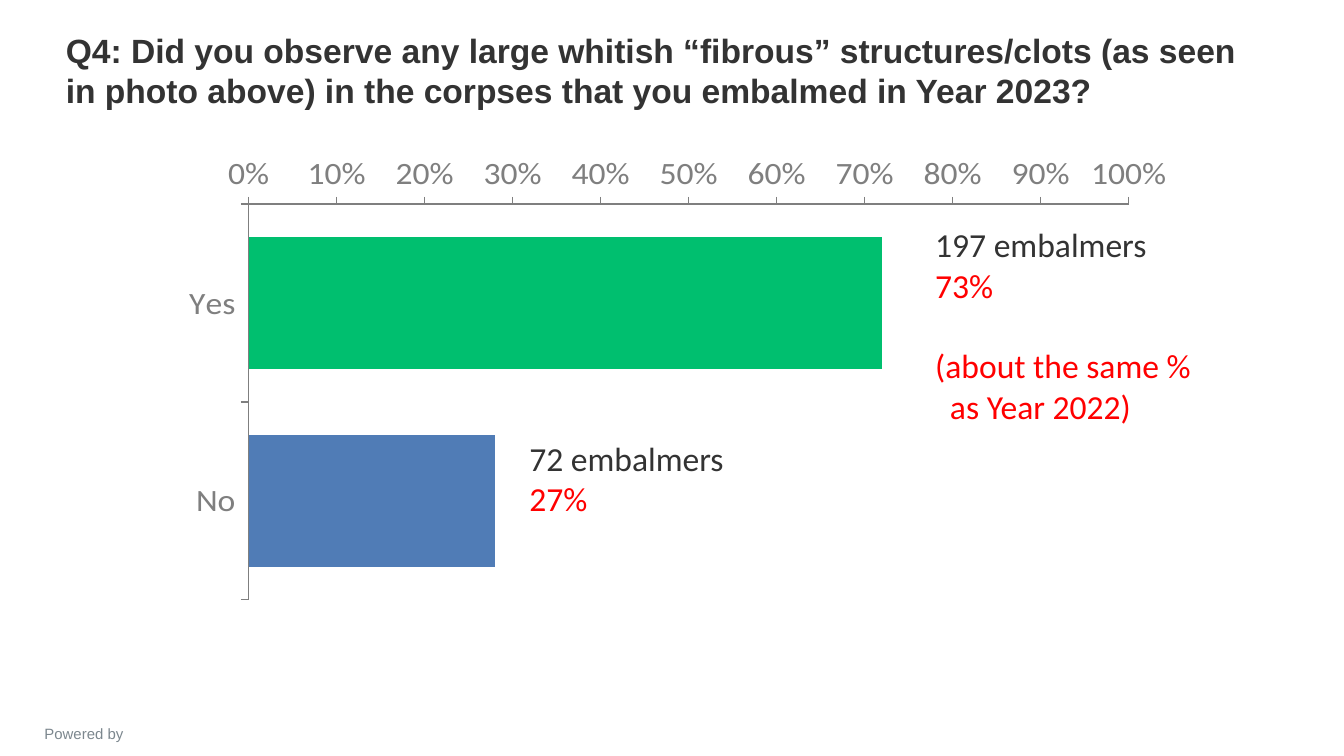
from dataclasses import dataclass
from typing import NamedTuple

from lxml import etree
from pptx import Presentation
from pptx.chart.data import CategoryChartData
from pptx.dml.color import RGBColor
from pptx.enum.chart import XL_CHART_TYPE, XL_TICK_LABEL_POSITION, XL_TICK_MARK
from pptx.enum.text import MSO_ANCHOR, MSO_AUTO_SIZE, PP_ALIGN
from pptx.oxml import parse_xml
from pptx.oxml.ns import nsdecls, qn
from pptx.util import Inches, Pt

LEFT, CENTER = PP_ALIGN.LEFT, PP_ALIGN.CENTER
TOP, BOTTOM = MSO_ANCHOR.TOP, MSO_ANCHOR.BOTTOM
NO_FIT, GROW = MSO_AUTO_SIZE.NONE, MSO_AUTO_SIZE.SHAPE_TO_FIT_TEXT
OUTSIDE, NO_TICK = XL_TICK_MARK.OUTSIDE, XL_TICK_MARK.NONE
LABELS_LOW = XL_TICK_LABEL_POSITION.LOW
BAR_CLUSTERED = XL_CHART_TYPE.BAR_CLUSTERED


@dataclass(frozen=True)
class Theme:
    ink: str = "333333"
    accent: str = "FF0000"
    axis: str = "7F7F7F"
    credit: str = "7C878E"
    heading_font: str = "Arial"
    body_font: str = "Calibri"
    body_size: float = 18
    small_size: float = 8


THEME = Theme()
SLIDE_WIDTH = 10
SLIDE_HEIGHT = SLIDE_WIDTH * 9 / 16


class Area(NamedTuple):
    """A rectangle in inches."""
    left: float
    top: float
    width: float
    height: float


class Line(NamedTuple):
    """One paragraph of text; gap in points, indent in inches."""
    text: str
    color: str = THEME.ink
    gap: float = 0
    indent: float = 0


class Answer(NamedTuple):
    label: str
    share: float
    color: str
    note_area: Area
    note: tuple[Line, ...]


ANSWERS = (
    Answer("Yes", 0.72, "00BF6F", Area(6.86, 1.62, 2.32, 1.62), (
        Line("197 embalmers"),
        Line("73%", THEME.accent),
        Line("(about the same %", THEME.accent, gap=21.5),
        Line("as Year 2022)", THEME.accent, indent=0.11),
    )),
    Answer("No", 0.28, "507CB6", Area(3.84, 3.21, 1.8, 0.71), (
        Line("72 embalmers"),
        Line("27%", THEME.accent),
    )),
)


def rgb(color: str) -> RGBColor:
    return RGBColor.from_string(color)


def place(area: Area) -> list[int]:
    return [Inches(length) for length in area]


def write(box, lines, *, font=THEME.body_font, size=THEME.body_size, bold=False,
          align=LEFT, anchor=TOP, wrap=True, fit=NO_FIT) -> None:
    """Fill a text box or placeholder with formatted paragraphs."""
    frame = box.text_frame
    frame.word_wrap, frame.auto_size, frame.vertical_anchor = wrap, fit, anchor
    for index, line in enumerate(lines):
        para = frame.paragraphs[0] if index == 0 else frame.add_paragraph()
        para.alignment = align
        para.space_before = Pt(line.gap)
        if line.indent:
            para._p.get_or_add_pPr().set("marL", str(Inches(line.indent)))
        span = para.add_run()
        span.text = line.text
        span.font.name, span.font.size, span.font.bold = font, Pt(size), bold
        span.font.color.rgb = rgb(line.color)


def add_note(page, area: Area, lines, **format_options) -> None:
    write(page.shapes.add_textbox(*place(area)), lines, **format_options)


def style_axis(axis) -> None:
    axis.has_major_gridlines = False
    axis.major_tick_mark, axis.minor_tick_mark = OUTSIDE, NO_TICK
    axis.format.line.color.rgb = rgb(THEME.axis)
    axis.format.line.width = Pt(0.75)
    axis.tick_labels.font.size = Pt(THEME.body_size)
    axis.tick_labels.font.color.rgb = rgb(THEME.axis)


def set_plot_area(chart, shares: Area) -> None:
    """Fix the inner plot area, given as shares of the chart frame."""
    plot_area = chart._chartSpace.chart.plotArea
    for old in plot_area.findall(qn("c:layout")):
        plot_area.remove(old)
    layout = parse_xml(f"<c:layout {nsdecls('c')}><c:manualLayout/></c:layout>")
    settings = {"layoutTarget": "inner", "xMode": "edge", "yMode": "edge",
                **dict(zip("xywh", shares))}
    for name, value in settings.items():
        etree.SubElement(layout[0], qn(f"c:{name}")).set("val", str(value))
    plot_area.insert(0, layout)


def add_answer_chart(page, area: Area) -> None:
    data = CategoryChartData(number_format="0%")
    data.categories = [answer.label for answer in ANSWERS]
    data.add_series("Series 1", [answer.share for answer in ANSWERS])
    chart = page.shapes.add_chart(BAR_CLUSTERED, *place(area), data).chart
    chart.has_legend = chart.has_title = False
    chart.font.name, chart.font.size = THEME.body_font, Pt(THEME.body_size)
    chart.font.color.rgb = rgb(THEME.ink)

    # Bars
    plot = chart.plots[0]
    plot.gap_width, plot.overlap, plot.vary_by_categories = 50, 100, False
    series = plot.series[0]
    series.format.fill.solid()
    series.format.fill.fore_color.rgb = rgb(ANSWERS[0].color)
    for index, answer in enumerate(ANSWERS):
        fill = series.points[index].format.fill
        fill.solid()
        fill.fore_color.rgb = rgb(answer.color)

    # Axes: first answer on top, percentages below the last answer
    categories, values = chart.category_axis, chart.value_axis
    for axis in (categories, values):
        style_axis(axis)
    categories.reverse_order = True
    categories.tick_label_position = LABELS_LOW
    categories.crosses_at = len(ANSWERS) + 1
    values.minimum_scale, values.maximum_scale, values.major_unit = 0, 1, 0.1
    values.tick_labels.number_format = "0%"
    values.tick_labels.number_format_is_linked = False
    set_plot_area(chart, Area(0.085, 0.018, 0.856, 0.819))


def main() -> None:
    deck = Presentation()
    deck.slide_width, deck.slide_height = Inches(SLIDE_WIDTH), Inches(SLIDE_HEIGHT)
    page = deck.slides.add_slide(deck.slide_layouts.get_by_name("Title Only"))

    # Title
    title = page.shapes.title
    title.left, title.top, title.width, title.height = place(Area(0.39, 0.27, 9, 0.6))
    question = ("Q4: Did you observe any large whitish “fibrous” structures/clots "
                "(as seen in photo above) in the corpses that you embalmed in Year 2023?")
    write(title, [Line(question)], font=THEME.heading_font, bold=True, anchor=BOTTOM)

    # Chart with a note beside each bar
    add_answer_chart(page, Area(1.2, 1.15, 7.65, 3.9))
    for answer in ANSWERS:
        add_note(page, answer.note_area, answer.note, wrap=False, fit=GROW)

    # Footer
    add_note(page, Area(0.05, 5.34, 1.15, 0.18), [Line("Powered by", THEME.credit)],
             font=THEME.heading_font, size=THEME.small_size, align=CENTER)

    deck.save("out.pptx")


if __name__ == "__main__":
    main()
